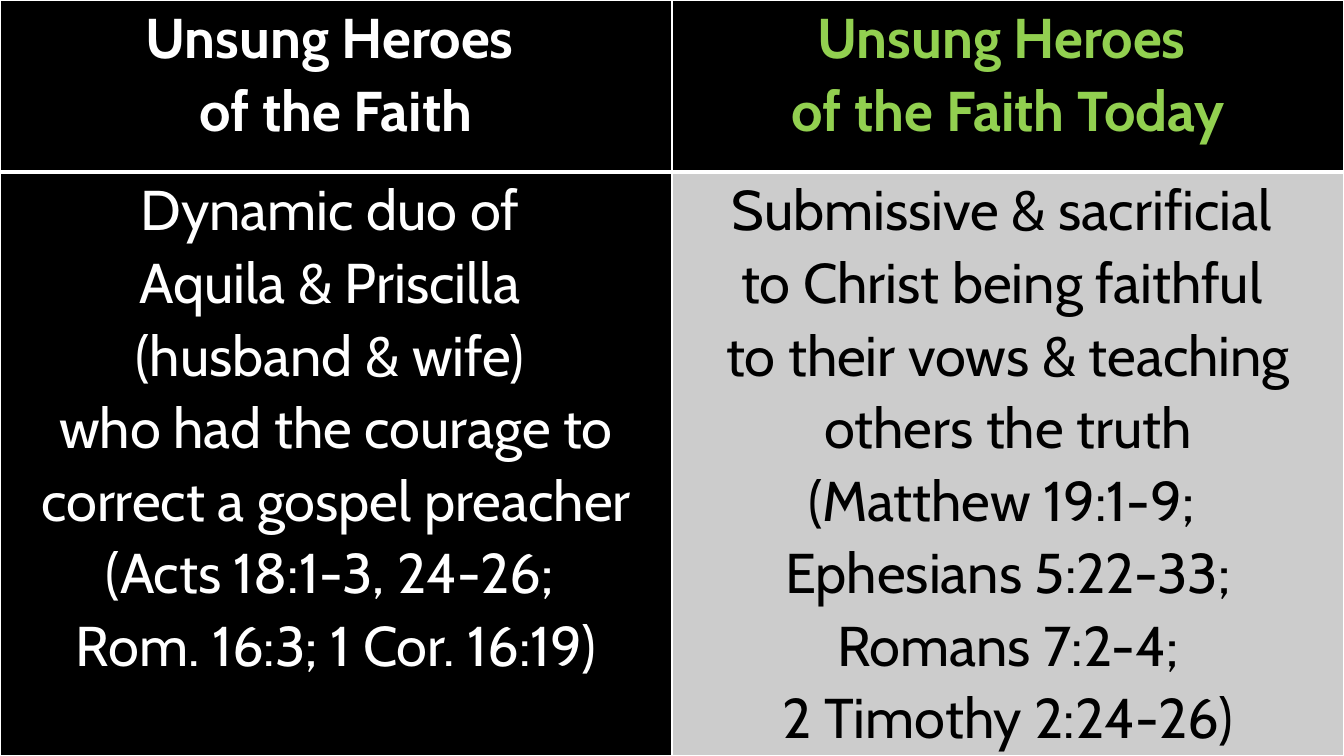
from lxml.etree import SubElement
from pptx import Presentation
from pptx.dml.color import RGBColor
from pptx.enum.text import PP_ALIGN
from pptx.oxml import parse_xml
from pptx.oxml.ns import nsdecls
from pptx.util import Cm, Pt

BLACK = RGBColor(0x00, 0x00, 0x00)
WHITE = RGBColor(0xFF, 0xFF, 0xFF)
GREEN = RGBColor(0x92, 0xD0, 0x50)
GREY = RGBColor(0xCC, 0xCC, 0xCC)

WIDTH, HEIGHT = Cm(33.87), Cm(19.05)
HEAD = Cm(4.34)

# Each cell: lines, text colour, fill colour
ROWS = [
    [
        (["Unsung Heroes ", "of the Faith"], WHITE, BLACK),
        (["Unsung Heroes ", "of the Faith Today"], GREEN, BLACK),
    ],
    [
        ([
            "Dynamic duo of ",
            "Aquila & Priscilla ",
            "(husband & wife) ",
            "who had the courage to correct a gospel preacher",
            "(Acts 18:1-3, 24-26; ",
            "Rom. 16:3; 1 Cor. 16:19)",
        ], WHITE, BLACK),
        ([
            "Submissive & sacrificial ",
            "to Christ being faithful ",
            "to their vows & teaching others the truth",
            "(Matthew 19:1-9; ",
            "Ephesians 5:22-33;",
            "Romans 7:2-4;",
            "2 Timothy 2:24-26)",
        ], BLACK, GREY),
    ],
]


def set_edges(cell, widths):
    """Draw white cell borders; widths maps L, R, T, B to points, in that order."""
    props = cell._tc.get_or_add_tcPr()
    for place, (side, width) in enumerate(widths.items()):
        line = parse_xml(
            f'<a:ln{side} {nsdecls("a")} w="{Pt(width)}"><a:solidFill>'
            f'<a:srgbClr val="{WHITE}"/></a:solidFill></a:ln{side}>'
        )
        props.insert(place, line)


def fill_cell(cell, lines, color, back, bold):
    cell.fill.solid()
    cell.fill.fore_color.rgb = back
    cell.margin_left = cell.margin_right = Cm(0.18)
    cell.margin_top = cell.margin_bottom = 0
    cell.text = "\n".join(lines)
    for para in cell.text_frame.paragraphs:
        para.alignment = PP_ALIGN.CENTER
        para.line_spacing = 1.07
        font = para.font
        font.name = "Cabin"
        font.size = Pt(40)
        font.bold = bold
        font.color.rgb = color


def add_heroes(slide):
    table = slide.shapes.add_table(2, 2, 0, 0, WIDTH, HEIGHT).table
    table.horz_banding = False
    table.rows[0].height = HEAD
    table.rows[1].height = HEIGHT - HEAD
    for row, cells in enumerate(ROWS):
        header = row == 0
        for col, (lines, color, back) in enumerate(cells):
            cell = table.cell(row, col)
            fill_cell(cell, lines, color, back, header)
            top, bottom = (1, 3) if header else (3, 1)
            set_edges(cell, {"L": 1, "R": 1, "T": top, "B": bottom})


def main():
    deck = Presentation()
    deck.slide_width, deck.slide_height = WIDTH, HEIGHT
    slide = deck.slides.add_slide(deck.slide_layouts[6])
    slide.background.fill.solid()
    slide.background.fill.fore_color.rgb = BLACK
    add_heroes(slide)
    deck.save("out.pptx")


if __name__ == "__main__":
    main()
